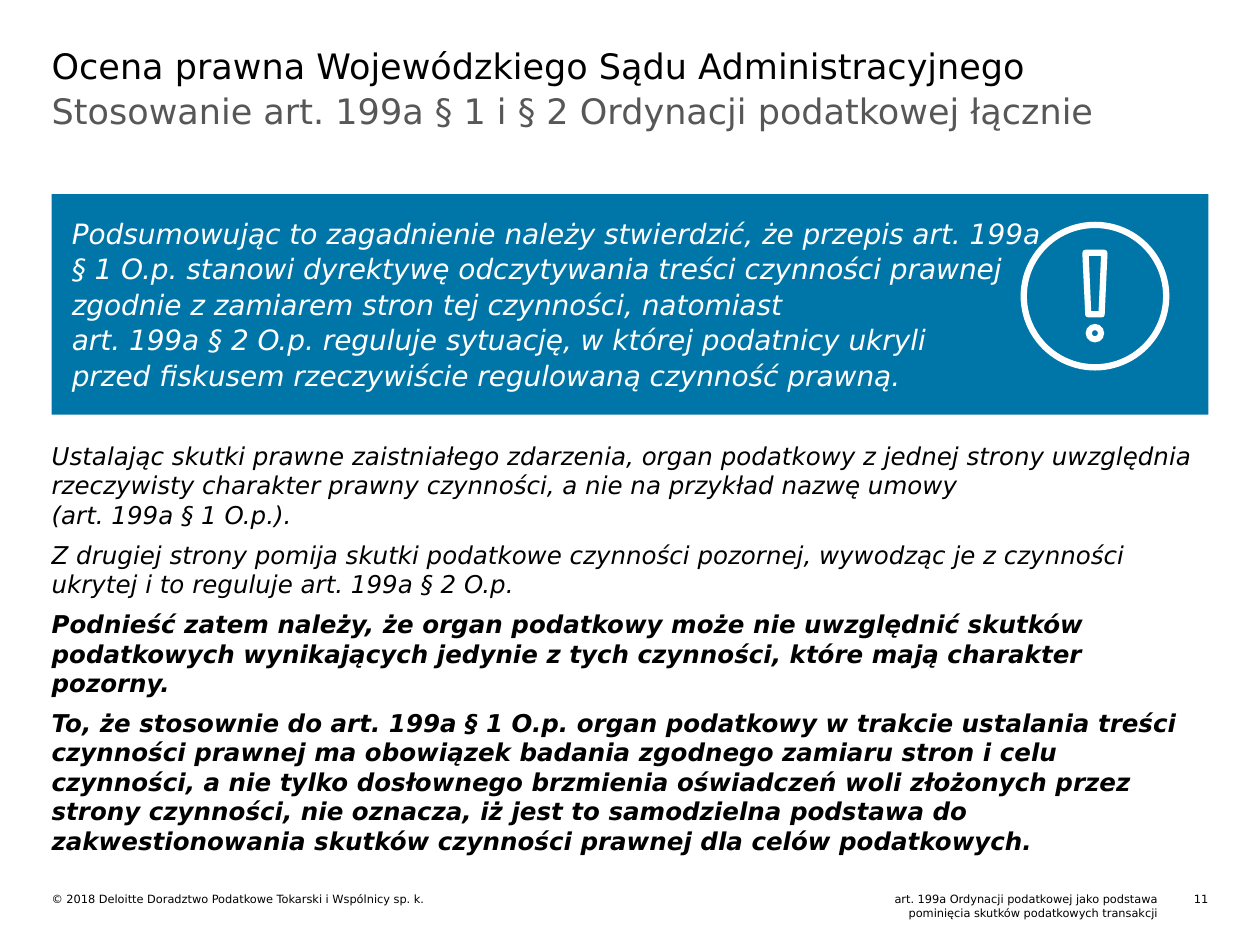
import copy

import pptx
import pptx.dml.color
import pptx.enum.shapes
import pptx.enum.text
import pptx.oxml.ns
import pptx.util
from lxml import etree

Pt = pptx.util.Pt
RGBColor = pptx.dml.color.RGBColor
Align = pptx.enum.text.PP_ALIGN
Shape = pptx.enum.shapes.MSO_SHAPE
qn = pptx.oxml.ns.qn

# Content
TITLE = "Ocena prawna Wojewódzkiego Sądu Administracyjnego"
SUBTITLE = "Stosowanie art. 199a § 1 i § 2 Ordynacji podatkowej łącznie"
SUMMARY = (
    "Podsumowując to zagadnienie należy stwierdzić, że przepis art. 199a § 1 O.p. "
    "stanowi dyrektywę odczytywania treści czynności prawnej zgodnie z zamiarem stron "
    "tej czynności, natomiast \vart. 199a § 2 O.p. reguluje sytuację, w której "
    "podatnicy ukryli \vprzed fiskusem rzeczywiście regulowaną czynność prawną."
)
# Paragraph text, bold
ARGUMENTS = [
    ("Ustalając skutki prawne zaistniałego zdarzenia, organ podatkowy z jednej strony "
     "uwzględnia rzeczywisty charakter prawny czynności, a nie na przykład nazwę umowy "
     "\v(art. 199a § 1 O.p.).", False),
    ("Z drugiej strony pomija skutki podatkowe czynności pozornej, wywodząc je z "
     "czynności ukrytej i to reguluje art. 199a § 2 O.p.", False),
    ("Podnieść zatem należy, że organ podatkowy może nie uwzględnić skutków podatkowych "
     "wynikających jedynie z tych czynności, które mają charakter pozorny.", True),
    ("To, że stosownie do art. 199a § 1 O.p. organ podatkowy w trakcie ustalania treści "
     "czynności prawnej ma obowiązek badania zgodnego zamiaru stron i celu czynności, a "
     "nie tylko dosłownego brzmienia oświadczeń woli złożonych przez strony czynności, "
     "nie oznacza, iż jest to samodzielna podstawa do zakwestionowania skutków czynności "
     "prawnej dla celów podatkowych.", True),
]
# Text, left, width, alignment
FOOTERS = [
    ("© 2018 Deloitte Doradztwo Podatkowe Tokarski i Wspólnicy sp. k.",
     29.5, 316, Align.LEFT),
    ("art. 199a Ordynacji podatkowej jako podstawa \v"
     "pominięcia skutków podatkowych transakcji ", 374.4, 289.4, Align.RIGHT),
    ("11", 672.5, 18, Align.RIGHT),
]

# Style
FONT = "DejaVu Sans"
BLACK = RGBColor(0x00, 0x00, 0x00)
GREY = RGBColor(0x57, 0x57, 0x57)
WHITE = RGBColor(0xFF, 0xFF, 0xFF)
BLUE = RGBColor(0x00, 0x76, 0xA8)

# Layout in points
LEFT, WIDTH = 29.5, 661
FOOTER_TOP = 509.8
ICON_X, ICON_Y = 625.7, 169.2
STROKE = 3.6
# Exclamation stroke: outer and inner outlines
BAR_OUTLINES = [
    [(620.6, 142.6), (630.9, 142.6), (632.4, 143.2), (632.9, 144.7), (631.3, 180),
     (630.7, 181), (629.5, 181.4), (622, 181.4), (620.8, 181), (620.2, 180),
     (618.5, 144.7), (619, 143.2)],
    [(629.2, 146.2), (627.8, 177.8), (623.6, 177.8), (622.2, 146.2)],
]


def place(box, left, top, width, height):
    box.left, box.top, box.width, box.height = map(Pt, (left, top, width, height))


def write(box, text, *, size, color=BLACK, bold=False, italic=False, align=Align.LEFT,
          insets=(0, 0, 0, 0), line=1.0, before=0, append=False):
    """Write one paragraph into a box, or append it to the text already there."""
    frame = box.text_frame
    frame.word_wrap = True
    frame.auto_size = pptx.enum.text.MSO_AUTO_SIZE.NONE
    frame.vertical_anchor = pptx.enum.text.MSO_ANCHOR.TOP
    (frame.margin_left, frame.margin_top,
     frame.margin_right, frame.margin_bottom) = map(Pt, insets)
    para = frame.add_paragraph() if append else frame.paragraphs[0]
    para.text = text
    para.alignment = align
    para.line_spacing = line
    para.space_before = Pt(before)
    for span in para.runs:
        font = span.font
        font.name, font.size = FONT, Pt(size)
        font.bold, font.italic = bold, italic
        font.color.rgb = color
    # Line breaks take the size of the text around them
    for line_break in para._p.findall(qn("a:br")):
        line_break.append(copy.deepcopy(para.runs[0]._r.rPr))
    return para


def paint(shape, color):
    shape.shadow.inherit = False
    shape.fill.solid()
    shape.fill.fore_color.rgb = color
    shape.line.fill.background()


def add_ring(page, center_y, diameter):
    ring = page.shapes.add_shape(
        Shape.DONUT, Pt(ICON_X - diameter / 2), Pt(center_y - diameter / 2),
        Pt(diameter), Pt(diameter))
    ring.adjustments[0] = STROKE / diameter
    paint(ring, WHITE)


def add_bar(page):
    outlines = [[(Pt(x), Pt(y)) for x, y in outline] for outline in BAR_OUTLINES]
    builder = page.shapes.build_freeform(*outlines[0][0])
    builder.add_line_segments(outlines[0][1:], close=True)
    builder.move_to(*outlines[1][0])
    builder.add_line_segments(outlines[1][1:], close=True)
    paint(builder.convert_to_shape(), WHITE)


def main():
    deck = pptx.Presentation()
    deck.slide_width, deck.slide_height = Pt(720), Pt(540)
    page = deck.slides.add_slide(deck.slide_layouts[1])

    # Title and subtitle
    title, subtitle = page.shapes.title, page.placeholders[1]
    place(title, LEFT, 25.2, WIDTH, 54.7)
    write(title, TITLE, size=20)
    place(subtitle, LEFT, 51.1, WIDTH, 59.8)
    para = write(subtitle, SUBTITLE, size=20, color=GREY)
    properties = para._p.get_or_add_pPr()
    properties.set("marL", "0")
    properties.set("indent", "0")
    etree.SubElement(properties, qn("a:buNone"))

    # Summary panel
    panel = page.shapes.add_shape(Shape.RECTANGLE, 0, 0, 0, 0)
    place(panel, LEFT, 110.9, WIDTH, 126)
    paint(panel, BLUE)
    write(panel, SUMMARY, size=16, color=WHITE, italic=True, line=1.06,
          insets=(11.5, 11.5, 93.6, 11.5))

    # Exclamation icon
    add_ring(page, ICON_Y, 85)
    add_bar(page)
    add_ring(page, 190.4, 10.6)

    # Arguments
    body = page.shapes.add_textbox(Pt(LEFT), Pt(252), Pt(WIDTH), Pt(239))
    for index, (text, bold) in enumerate(ARGUMENTS):
        write(body, text, size=14, bold=bold, italic=True,
              before=6 if index else 0, append=index > 0)

    # Footer
    for text, left, width, align in FOOTERS:
        footer = page.shapes.add_textbox(Pt(left), Pt(FOOTER_TOP), Pt(width), Pt(16))
        write(footer, text, size=6.5, align=align)

    deck.save("out.pptx")


if __name__ == "__main__":
    main()
